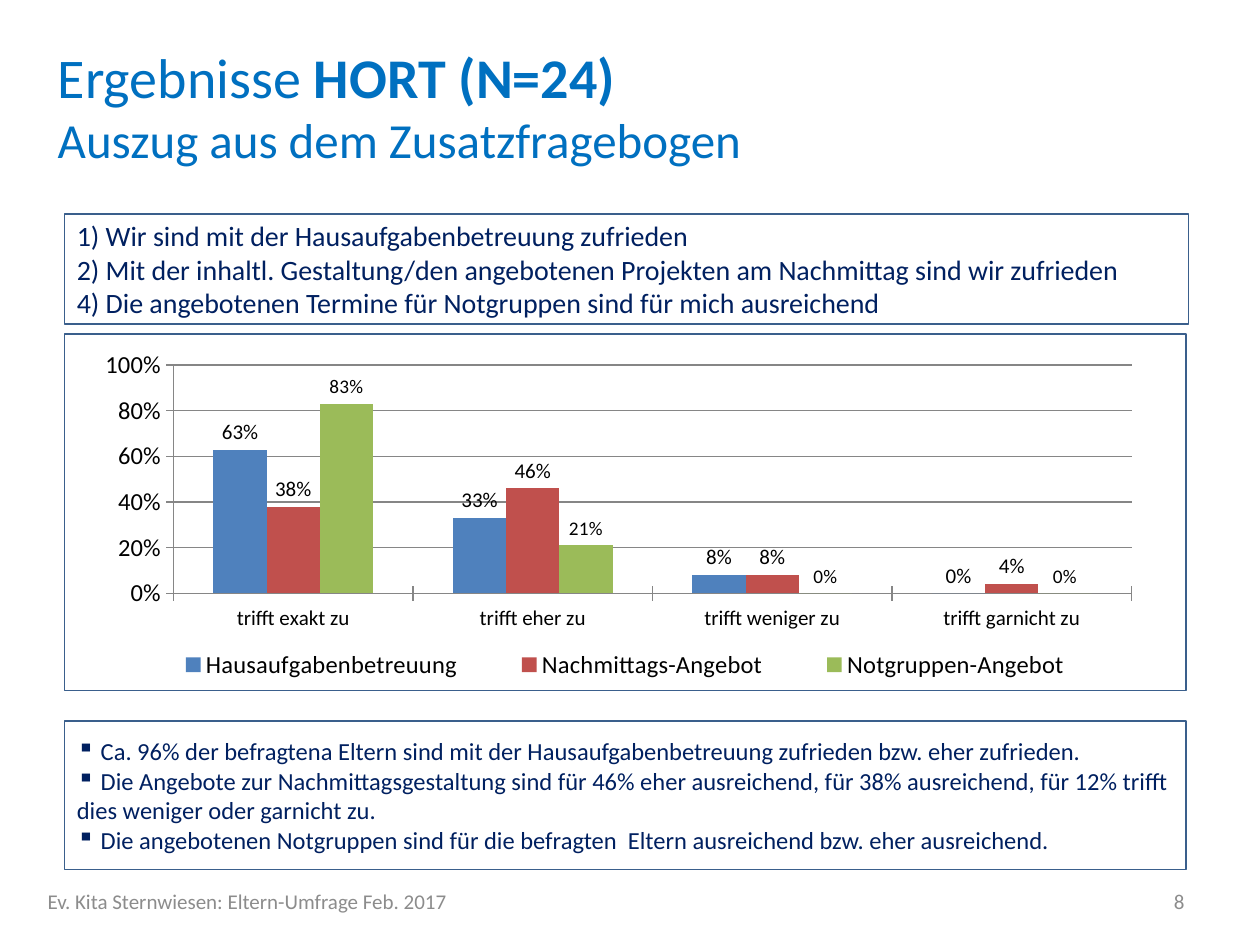
"""Builds the slide with the parent survey results for the after-school group."""
from lxml import etree
from pptx import Presentation
from pptx.chart.data import CategoryChartData
from pptx.dml.color import RGBColor
from pptx.enum.chart import XL_CHART_TYPE, XL_LABEL_POSITION, XL_LEGEND_POSITION, XL_TICK_MARK
from pptx.enum.shapes import MSO_SHAPE
from pptx.enum.text import MSO_ANCHOR, PP_ALIGN
from pptx.oxml.ns import qn
from pptx.util import Cm, Pt

COLUMNS = XL_CHART_TYPE.COLUMN_CLUSTERED
OUTSIDE_END = XL_LABEL_POSITION.OUTSIDE_END
LEGEND_BOTTOM = XL_LEGEND_POSITION.BOTTOM
CROSS = XL_TICK_MARK.CROSS
NO_TICK = XL_TICK_MARK.NONE
RECTANGLE = MSO_SHAPE.RECTANGLE
MIDDLE = MSO_ANCHOR.MIDDLE
LEFT, RIGHT = PP_ALIGN.LEFT, PP_ALIGN.RIGHT

FONT = "Calibri"
BLUE = RGBColor(0x00, 0x70, 0xC0)
NAVY = RGBColor(0x00, 0x20, 0x60)
FRAME = RGBColor(0x3A, 0x5F, 0x8C)
GRAY = RGBColor(0x8C, 0x8C, 0x8C)
AXIS_GRAY = RGBColor(0x86, 0x86, 0x86)
BLACK = RGBColor(0x00, 0x00, 0x00)

TITLE = [
    (32, [("Ergebnisse ", False), ("HORT (N=24)", True)]),
    (28, [("Auszug aus dem Zusatzfragebogen", False)]),
]
QUESTIONS = [
    "1) Wir sind mit der Hausaufgabenbetreuung zufrieden",
    "2) Mit der inhaltl. Gestaltung/den angebotenen Projekten am Nachmittag sind wir zufrieden",
    "4) Die angebotenen Termine für Notgruppen sind für mich ausreichend",
]
FINDINGS = [
    " Ca. 96% der befragtena Eltern sind mit der Hausaufgabenbetreuung zufrieden bzw. eher zufrieden.",
    " Die Angebote zur Nachmittagsgestaltung sind für 46% eher ausreichend, für 38% ausreichend, "
    "für 12% trifft dies weniger oder garnicht zu.",
    " Die angebotenen Notgruppen sind für die befragten  Eltern ausreichend bzw. eher ausreichend.",
]
ANSWERS = ["trifft exakt zu", "trifft eher zu", "trifft weniger zu", "trifft garnicht zu"]
SERIES = [
    ("Hausaufgabenbetreuung", (0.63, 0.33, 0.08, 0), RGBColor(0x4F, 0x81, 0xBD), 12),
    ("Nachmittags-Angebot", (0.38, 0.46, 0.08, 0.04), RGBColor(0xC0, 0x50, 0x4D), 12),
    ("Notgruppen-Angebot", (0.83, 0.21, 0, 0), RGBColor(0x9B, 0xBB, 0x59), 11),
]
FOOTERS = [
    ("Ev. Kita Sternwiesen: Eltern-Umfrage Feb. 2017", 0.71, 16.03, LEFT),
    ("8", 18.21, 5.92, RIGHT),
]
BOX_LEFT = 1.3
PLOT_AREA = (0.09, 0.06, 0.87, 0.64)
LEGEND_AREA = (0.05, 0.84, 0.9, 0.12)


def style_font(font, size, color):
    font.name, font.size = FONT, Pt(size)
    font.color.rgb = color


def write_lines(shape, lines, size, color, alignment=LEFT, bullet=None):
    frame = shape.text_frame
    frame.word_wrap = True
    frame.vertical_anchor = MIDDLE
    frame.text = "\n".join(lines)
    for paragraph in frame.paragraphs:
        paragraph.alignment = alignment
        style_font(paragraph.font, size, color)
        if bullet:
            properties = paragraph._p.get_or_add_pPr()
            mark = etree.Element(qn("a:buChar"), char=bullet)
            properties.insert(0, mark)


def add_title(slide):
    title = slide.shapes.title
    title.left, title.top, title.width, title.height = Cm(0.91), Cm(0.71), Cm(24.49), Cm(2.82)
    frame = title.text_frame
    frame.vertical_anchor = MIDDLE
    for index, (size, parts) in enumerate(TITLE):
        paragraph = frame.add_paragraph() if index else frame.paragraphs[0]
        paragraph.alignment = LEFT
        style_font(paragraph.font, size, BLUE)
        for text, bold in parts:
            run = paragraph.add_run()
            run.text = text
            run.font.bold = bold


def add_box(slide, top, width, height):
    box = slide.shapes.add_shape(RECTANGLE, Cm(BOX_LEFT), Cm(top), Cm(width), Cm(height))
    box.shadow.inherit = False
    box.fill.background()
    box.line.color.rgb = FRAME
    box.line.width = Pt(1)
    return box


def set_layout(element, area, inner=False):
    for old in element.findall(qn("c:layout")):
        element.remove(old)
    layout = etree.Element(qn("c:layout"))
    manual = etree.SubElement(layout, qn("c:manualLayout"))
    if inner:
        etree.SubElement(manual, qn("c:layoutTarget"), val="inner")
    for mode in ("xMode", "yMode"):
        etree.SubElement(manual, qn(f"c:{mode}"), val="edge")
    for name, value in zip("xywh", area):
        etree.SubElement(manual, qn(f"c:{name}"), val=str(value))
    position = element.find(qn("c:legendPos"))
    element.insert(0 if position is None else 1, layout)


def add_result_chart(slide):
    data = CategoryChartData(number_format="0%")
    data.categories = ANSWERS
    for name, values, _, _ in SERIES:
        data.add_series(name, values)
    chart = slide.shapes.add_chart(COLUMNS, Cm(1.5), Cm(6.93), Cm(22.2), Cm(7.19), data).chart
    style_font(chart.font, 18, BLACK)
    chart.has_title = False

    plot = chart.plots[0]
    plot.gap_width, plot.overlap = 150, 0
    plot.vary_by_categories = False
    for series, (_, _, color, label_size) in zip(plot.series, SERIES):
        series.format.fill.solid()
        series.format.fill.fore_color.rgb = color
        labels = series.data_labels
        labels.show_value = True
        labels.number_format, labels.number_format_is_linked = "0%", False
        labels.position = OUTSIDE_END
        style_font(labels.font, label_size, BLACK)

    for axis, size in ((chart.category_axis, 12), (chart.value_axis, 14)):
        axis.major_tick_mark, axis.minor_tick_mark = CROSS, NO_TICK
        axis.format.line.color.rgb = AXIS_GRAY
        style_font(axis.tick_labels.font, size, BLACK)
    values = chart.value_axis
    values.minimum_scale, values.maximum_scale, values.major_unit = 0, 1, 0.2
    values.tick_labels.number_format = "0%"
    values.tick_labels.number_format_is_linked = False
    values.has_major_gridlines = True
    values.major_gridlines.format.line.color.rgb = AXIS_GRAY

    chart.has_legend = True
    legend = chart.legend
    legend.position = LEGEND_BOTTOM
    legend.include_in_layout = False
    style_font(legend.font, 14, BLACK)
    plot_area = chart._chartSpace.find(f"{qn('c:chart')}/{qn('c:plotArea')}")
    set_layout(plot_area, PLOT_AREA, inner=True)
    set_layout(legend._element, LEGEND_AREA)


def main():
    presentation = Presentation()
    presentation.slide_width, presentation.slide_height = Cm(25.4), Cm(19.05)
    slide = presentation.slides.add_slide(presentation.slide_layouts[5])
    for text, left, width, alignment in FOOTERS:
        footer = slide.shapes.add_textbox(Cm(left), Cm(17.65), Cm(width), Cm(1.02))
        write_lines(footer, [text], 12, GRAY, alignment)
    add_title(slide)
    write_lines(add_box(slide, 14.53, 22.61, 3), FINDINGS, 14, NAVY, bullet="▪")
    write_lines(add_box(slide, 4.32, 22.66, 2.21), QUESTIONS, 16, NAVY)
    add_box(slide, 6.73, 22.61, 7.19)
    add_result_chart(slide)
    presentation.save("out.pptx")


if __name__ == "__main__":
    main()
